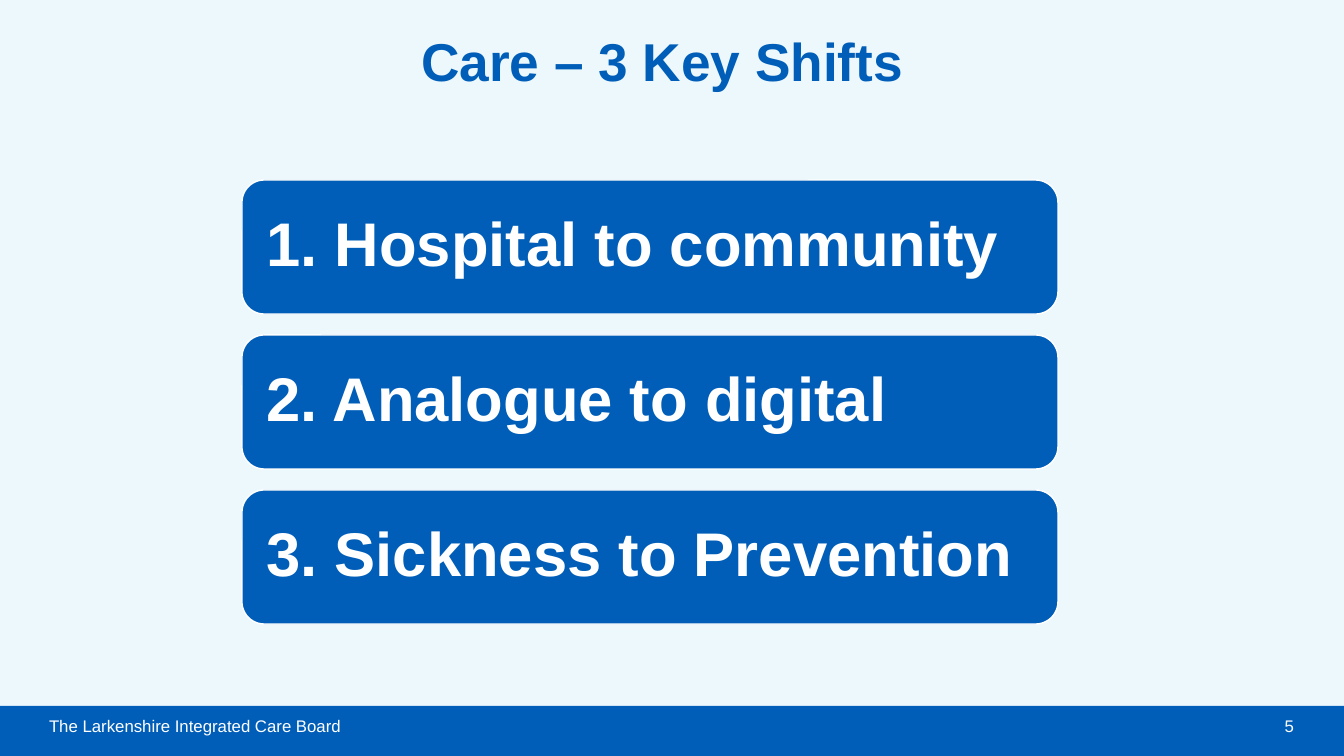
from pptx import Presentation
from pptx.dml.color import RGBColor
from pptx.enum.shapes import MSO_SHAPE as Shape
from pptx.enum.text import MSO_ANCHOR as Anchor, MSO_AUTO_SIZE as AutoSize, PP_ALIGN as Align
from pptx.util import Pt

TITLE = "Care – 3 Key Shifts"
SHIFTS = ["1. Hospital to community", "2. Analogue to digital", "3. Sickness to Prevention"]
FOOTER = "The Larkenshire Integrated Care Board"
PAGE_NUMBER = "5"

COLOURS = {"blue": "005EB8", "white": "FFFFFF", "pale": "ECF8FC"}
FORMATS = {
    "title": {"size": Pt(38), "bold": True, "name": "Arial"},
    "shift": {"size": Pt(44), "bold": True, "name": "Arial"},
    "footer": {"size": Pt(12), "bold": False, "name": "Arial"},
}

EMU_PER_PX = 914400 / 100.8
PAGE_WIDTH, PAGE_HEIGHT = 1344, 756
BAND_TOP = 706
FOOTER_HEIGHT = 40
SHIFT_LEFT, SHIFT_TOP, SHIFT_WIDTH, SHIFT_HEIGHT = 242, 180, 816, 134
SHIFT_GAP = 21
SHIFT_INSET = 18


def px(length):
    return round(length * EMU_PER_PX)


def colour(name):
    return RGBColor.from_string(COLOURS[name])


def write(shape, text, style, ink, align=Align.LEFT, inset=0, spacing=1.0):
    frame = shape.text_frame
    frame.text = text
    frame.auto_size = AutoSize.NONE
    frame.word_wrap = True
    frame.vertical_anchor = Anchor.MIDDLE
    frame.margin_left = frame.margin_right = px(inset)
    frame.margin_top = frame.margin_bottom = 0
    para = frame.paragraphs[0]
    para.alignment = align
    para.line_spacing = spacing
    font = para.runs[0].font
    for key, value in FORMATS[style].items():
        setattr(font, key, value)
    font.color.rgb = colour(ink)


def add_block(page, kind, *bounds):
    block = page.shapes.add_shape(kind, *map(px, bounds))
    block.shadow.inherit = False
    block.fill.solid()
    block.fill.fore_color.rgb = colour("blue")
    block.line.fill.background()
    return block


def main():
    deck = Presentation()
    deck.slide_width, deck.slide_height = px(PAGE_WIDTH), px(PAGE_HEIGHT)
    page = deck.slides.add_slide(deck.slide_layouts.get_by_name("Title Only"))
    page.background.fill.solid()
    page.background.fill.fore_color.rgb = colour("pale")

    title = page.shapes.title
    title.left, title.top, title.width, title.height = map(px, (421, 31, 485, 66))
    write(title, TITLE, "title", "blue", spacing=0.9)

    add_block(page, Shape.RECTANGLE, 0, BAND_TOP, PAGE_WIDTH, PAGE_HEIGHT - BAND_TOP)

    for index, shift in enumerate(SHIFTS):
        top = SHIFT_TOP + index * (SHIFT_HEIGHT + SHIFT_GAP)
        block = add_block(page, Shape.ROUNDED_RECTANGLE,
                          SHIFT_LEFT, top, SHIFT_WIDTH, SHIFT_HEIGHT)
        block.line.color.rgb = colour("white")
        block.line.width = Pt(1)
        write(block, shift, "shift", "white", inset=SHIFT_INSET, spacing=0.9)

    for text, left, width, align in [(FOOTER, 49, 850, Align.LEFT),
                                     (PAGE_NUMBER, 1151, 143, Align.RIGHT)]:
        box = page.shapes.add_textbox(*map(px, (left, BAND_TOP, width, FOOTER_HEIGHT)))
        write(box, text, "footer", "white", align)

    deck.save("out.pptx")


if __name__ == "__main__":
    main()
